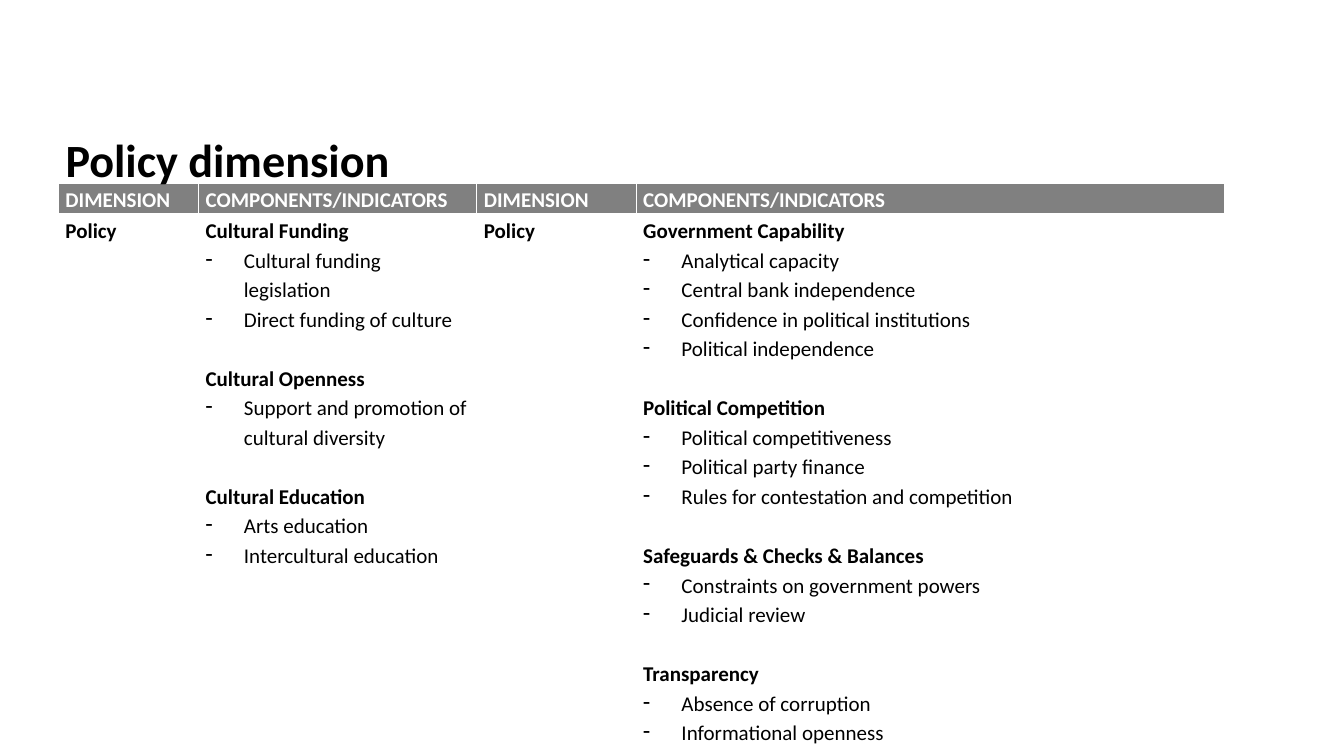
from lxml.etree import SubElement
from pptx import Presentation
from pptx.dml.color import RGBColor
from pptx.enum.text import MSO_ANCHOR, MSO_AUTO_SIZE, PP_ALIGN
from pptx.oxml.ns import qn
from pptx.util import Inches, Pt

COLORS = {"text": "000000", "header": "808080", "white": "FFFFFF"}
FONT = "Calibri"
TEXT_SIZE = 15
LINE_SPACING = 1.15
GROUP_GAP = 21
INDENT = Inches(0.38)
SLIDE_WIDTH, SLIDE_HEIGHT = 13.33, 7.5

COLUMN_WIDTHS = [1.39, 2.76, 1.58, 5.84]
ROW_HEIGHTS = [0.31, 4.58]
HEADINGS = ["DIMENSION", "COMPONENTS/INDICATORS"] * 2
DIMENSIONS = [
    {"Policy": []},
    {
        "Cultural Funding": ["Cultural funding legislation", "Direct funding of culture"],
        "Cultural Openness": ["Support and promotion of cultural diversity"],
        "Cultural Education": ["Arts education", "Intercultural education"],
    },
    {"Policy": []},
    {
        "Government Capability": [
            "Analytical capacity",
            "Central bank independence",
            "Confidence in political institutions",
            "Political independence",
        ],
        "Political Competition": [
            "Political competitiveness",
            "Political party finance",
            "Rules for contestation and competition",
        ],
        "Safeguards & Checks & Balances": ["Constraints on government powers", "Judicial review"],
        "Transparency": ["Absence of corruption", "Informational openness"],
    },
]


def add_run(paragraph, text, size, color, bold):
    run = paragraph.add_run()
    run.text = text
    run.font.name = FONT
    run.font.size = Pt(size)
    run.font.bold = bold
    run.font.color.rgb = RGBColor.from_string(COLORS[color])


def set_dash_bullet(paragraph):
    properties = paragraph._p.get_or_add_pPr()
    properties.set("marL", str(INDENT))
    properties.set("indent", str(-INDENT))
    SubElement(properties, qn("a:buFontTx"))
    SubElement(properties, qn("a:buChar"), char="-")


def format_cell(cell, bottom_border):
    """Set the insets and white borders; the fill must be set afterwards."""
    cell.margin_left = cell.margin_right = Inches(0.07)
    cell.margin_top = cell.margin_bottom = 0
    cell.vertical_anchor = MSO_ANCHOR.TOP
    properties = cell._tc.get_or_add_tcPr()
    for side, width in (("L", 1), ("R", 1), ("T", 1), ("B", bottom_border)):
        border = SubElement(properties, qn(f"a:ln{side}"), w=str(Pt(width)))
        fill = SubElement(border, qn("a:solidFill"))
        SubElement(fill, qn("a:srgbClr"), val=COLORS["white"])


def fill_header_cell(cell, heading):
    format_cell(cell, bottom_border=3)
    cell.fill.solid()
    cell.fill.fore_color.rgb = RGBColor.from_string(COLORS["header"])
    paragraph = cell.text_frame.paragraphs[0]
    paragraph.line_spacing = LINE_SPACING
    add_run(paragraph, heading, TEXT_SIZE, "white", True)


def fill_component_cell(cell, components):
    format_cell(cell, bottom_border=1)
    cell.fill.background()
    frame = cell.text_frame
    for number, (component, indicators) in enumerate(components.items()):
        paragraph = frame.add_paragraph() if number else frame.paragraphs[0]
        paragraph.line_spacing = LINE_SPACING
        if number:
            paragraph.space_before = Pt(GROUP_GAP)
        add_run(paragraph, component, TEXT_SIZE, "text", True)
        for indicator in indicators:
            paragraph = frame.add_paragraph()
            paragraph.line_spacing = LINE_SPACING
            set_dash_bullet(paragraph)
            add_run(paragraph, indicator, TEXT_SIZE, "text", False)


def add_indicator_table(slide, left, top):
    box = [Inches(n) for n in (left, top, sum(COLUMN_WIDTHS), sum(ROW_HEIGHTS))]
    table = slide.shapes.add_table(len(ROW_HEIGHTS), len(COLUMN_WIDTHS), *box).table
    table.horz_banding = False
    for row, height in zip(table.rows, ROW_HEIGHTS):
        row.height = Inches(height)
    for index, width in enumerate(COLUMN_WIDTHS):
        table.columns[index].width = Inches(width)
        fill_header_cell(table.cell(0, index), HEADINGS[index])
        fill_component_cell(table.cell(1, index), DIMENSIONS[index])


def place_title(slide, text, left, top, width, height):
    title = slide.shapes.title
    title.left, title.top = Inches(left), Inches(top)
    title.width, title.height = Inches(width), Inches(height)
    frame = title.text_frame
    frame.word_wrap = True
    frame.auto_size = MSO_AUTO_SIZE.NONE
    frame.vertical_anchor = MSO_ANCHOR.MIDDLE
    paragraph = frame.paragraphs[0]
    paragraph.alignment = PP_ALIGN.LEFT
    paragraph.line_spacing = 0.7
    add_run(paragraph, text, 33, "text", True)
    slide.shapes._spTree.append(title._element)  # in front of the table


def main():
    presentation = Presentation()
    presentation.slide_width = Inches(SLIDE_WIDTH)
    presentation.slide_height = Inches(SLIDE_HEIGHT)
    slide = presentation.slides.add_slide(presentation.slide_layouts[5])
    add_indicator_table(slide, 0.58, 1.82)
    place_title(slide, "Policy dimension", 0.55, 1.39, 11.5, 0.52)
    presentation.save("out.pptx")


if __name__ == "__main__":
    main()
